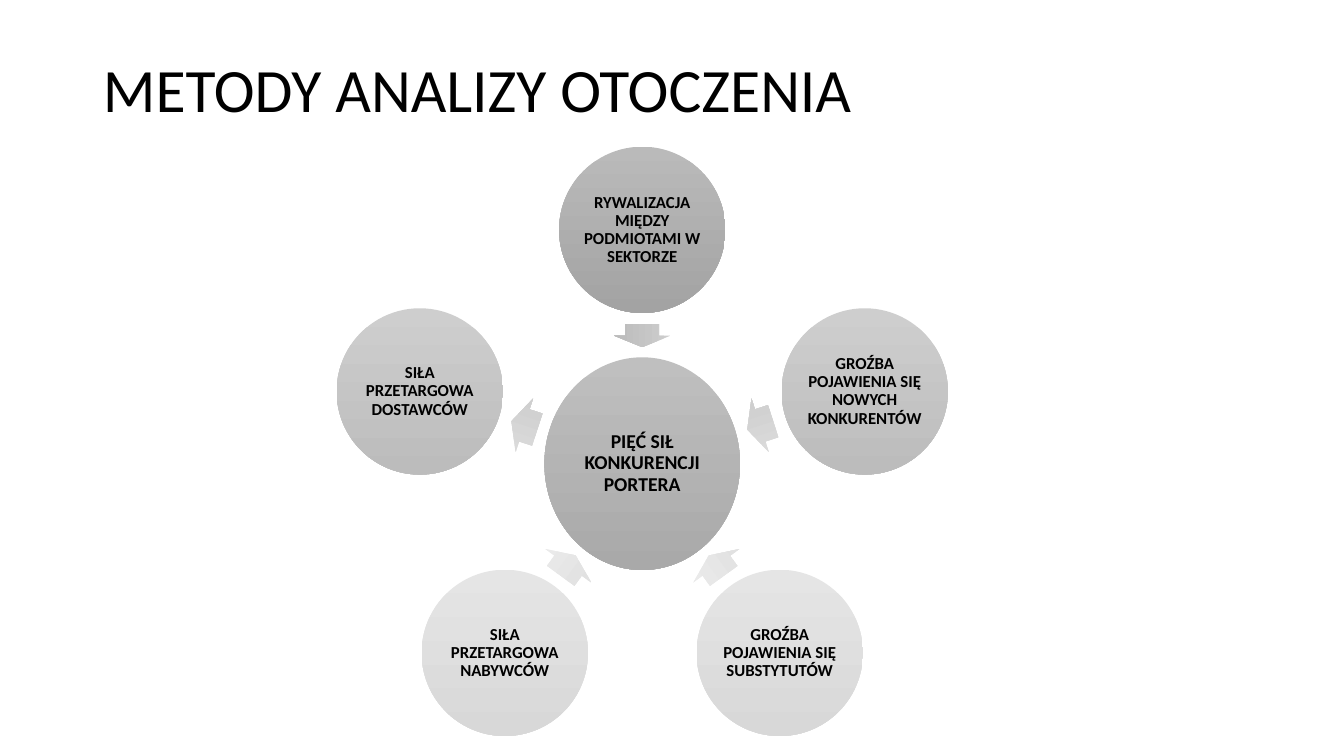
from math import cos, radians, sin

from pptx import Presentation
from pptx.dml.color import RGBColor
from pptx.enum.shapes import MSO_SHAPE
from pptx.enum.text import MSO_ANCHOR, PP_ALIGN
from pptx.util import Emu, Pt

PX = 9144  # 100 px to the inch
FONT = "Calibri"
BLACK = RGBColor(0x00, 0x00, 0x00)


def gray(level):
    return RGBColor(level, level, level)


# Gradients from top to bottom
HUB_FILL = gray(0xBF), gray(0xA9)
TOP_FILL = gray(0xBA), gray(0xA3)
SIDE_FILL = gray(0xCE), gray(0xBC)
LOW_FILL = gray(0xE5), gray(0xD8)
TOP_ARROW = gray(0xCD), gray(0xBB)
SIDE_ARROW = gray(0xDC), gray(0xCD)
LOW_ARROW = gray(0xEC), gray(0xDF)

# Layout of the wheel
CENTER_X, CENTER_Y = 637, 460
ORBIT = 232
HUB_W, HUB_H = 194, 211
FORCE_SIZE = 165
ARROW_H = 56

# Clockwise from the top: text, fill, arrow fill, arrow length, arrow orbit, arrow turn
FORCES = [
    ("RYWALIZACJA MIĘDZY PODMIOTAMI W SEKTORZE", TOP_FILL, TOP_ARROW, 23, 127, 90),
    ("GROŹBA POJAWIENIA SIĘ NOWYCH KONKURENTÓW", SIDE_FILL, SIDE_ARROW, 27, 123, 162),
    ("GROŹBA POJAWIENIA SIĘ SUBSTYTUTÓW", LOW_FILL, LOW_ARROW, 25, 125, 234),
    ("SIŁA PRZETARGOWA NABYWCÓW", LOW_FILL, LOW_ARROW, 25, 125, 306),
    ("SIŁA PRZETARGOWA DOSTAWCÓW", SIDE_FILL, SIDE_ARROW, 27, 123, 198),
]


def px(n):
    return Emu(round(n * PX))


def on_orbit(radius, angle):
    a = radians(angle)
    return CENTER_X + radius * cos(a), CENTER_Y + radius * sin(a)


def write(tf, text, size, bold, align):
    tf.word_wrap = True
    tf.vertical_anchor = MSO_ANCHOR.MIDDLE
    p = tf.paragraphs[0]
    p.alignment = align
    p.line_spacing = 0.9
    r = p.add_run()
    r.text = text
    r.font.name = FONT
    r.font.size = Pt(size)
    r.font.bold = bold
    r.font.color.rgb = BLACK


def add_title(s, text):
    title = s.shapes.title
    title.left, title.top, title.width, title.height = map(px, (92, 19, 1150, 145))
    write(title.text_frame, text, 44, False, PP_ALIGN.LEFT)


def add_centered(s, kind, x, y, w, h, colors):
    sp = s.shapes.add_shape(kind, px(x - w / 2), px(y - h / 2), px(w), px(h))
    sp.shadow.inherit = False
    sp.line.fill.background()
    sp.fill.gradient()
    sp.fill.gradient_angle = 270
    for stop, color in zip(sp.fill.gradient_stops, colors):
        stop.color.rgb = color
    return sp


def add_circle(s, x, y, w, h, colors, text, size):
    sp = add_centered(s, MSO_SHAPE.OVAL, x, y, w, h, colors)
    tf = sp.text_frame
    # The longest word needs the full width inside the circle
    tf.margin_left = tf.margin_right = tf.margin_top = tf.margin_bottom = 0
    write(tf, text, size, True, PP_ALIGN.CENTER)


def add_arrow(s, x, y, length, colors, turn):
    sp = add_centered(s, MSO_SHAPE.RIGHT_ARROW, x, y, length, ARROW_H, colors)
    sp.adjustments[0] = 0.6
    sp.adjustments[1] = 0.5
    sp.rotation = turn


def main():
    prs = Presentation()
    prs.slide_width, prs.slide_height = px(1333), px(750)
    s = prs.slides.add_slide(prs.slide_layouts[5])
    add_title(s, "METODY ANALIZY OTOCZENIA")

    # Hub
    add_circle(s, CENTER_X, CENTER_Y, HUB_W, HUB_H, HUB_FILL,
               "PIĘĆ SIŁ KONKURENCJI PORTERA", 14)

    # Five forces with their arrows
    for i, (text, fill, arrow_fill, length, orbit, turn) in enumerate(FORCES):
        angle = -90 + i * 360 / len(FORCES)
        add_arrow(s, *on_orbit(orbit, angle), length, arrow_fill, turn)
        add_circle(s, *on_orbit(ORBIT, angle), FORCE_SIZE, FORCE_SIZE, fill, text, 12)

    prs.save("out.pptx")


if __name__ == "__main__":
    main()
